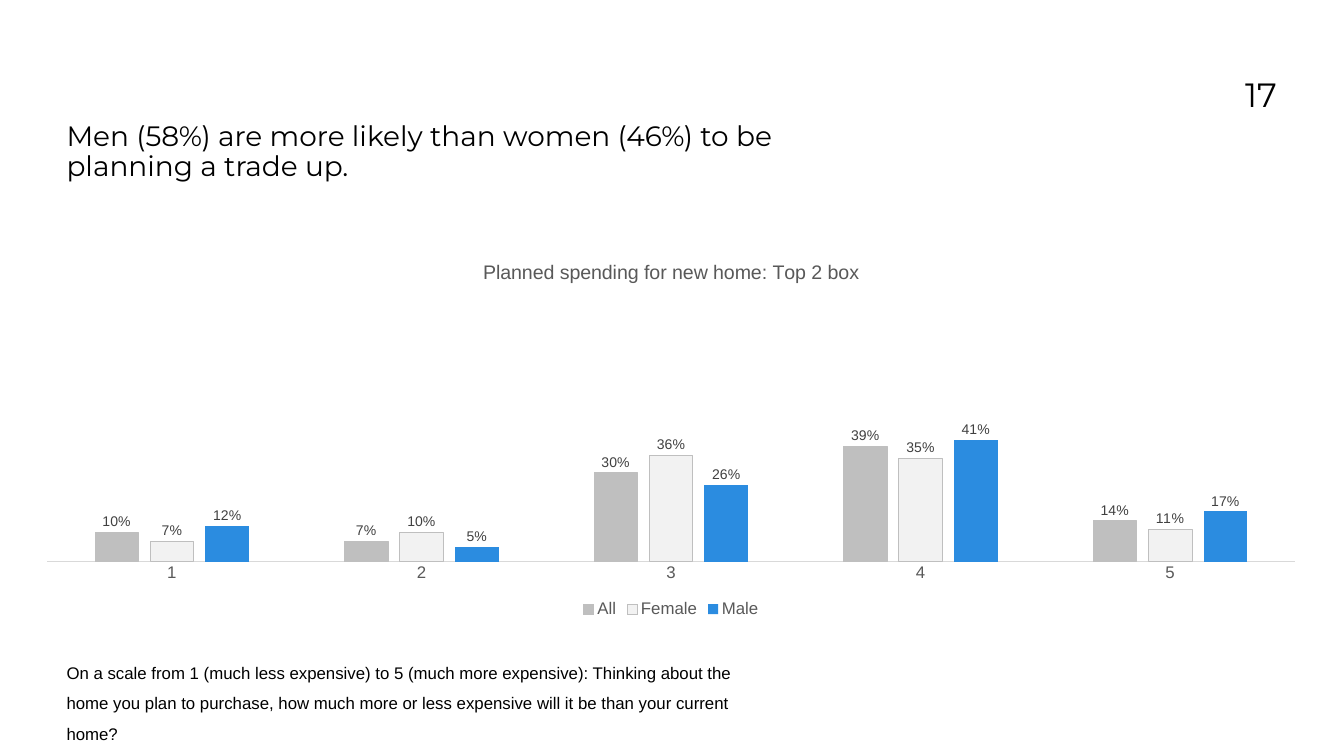
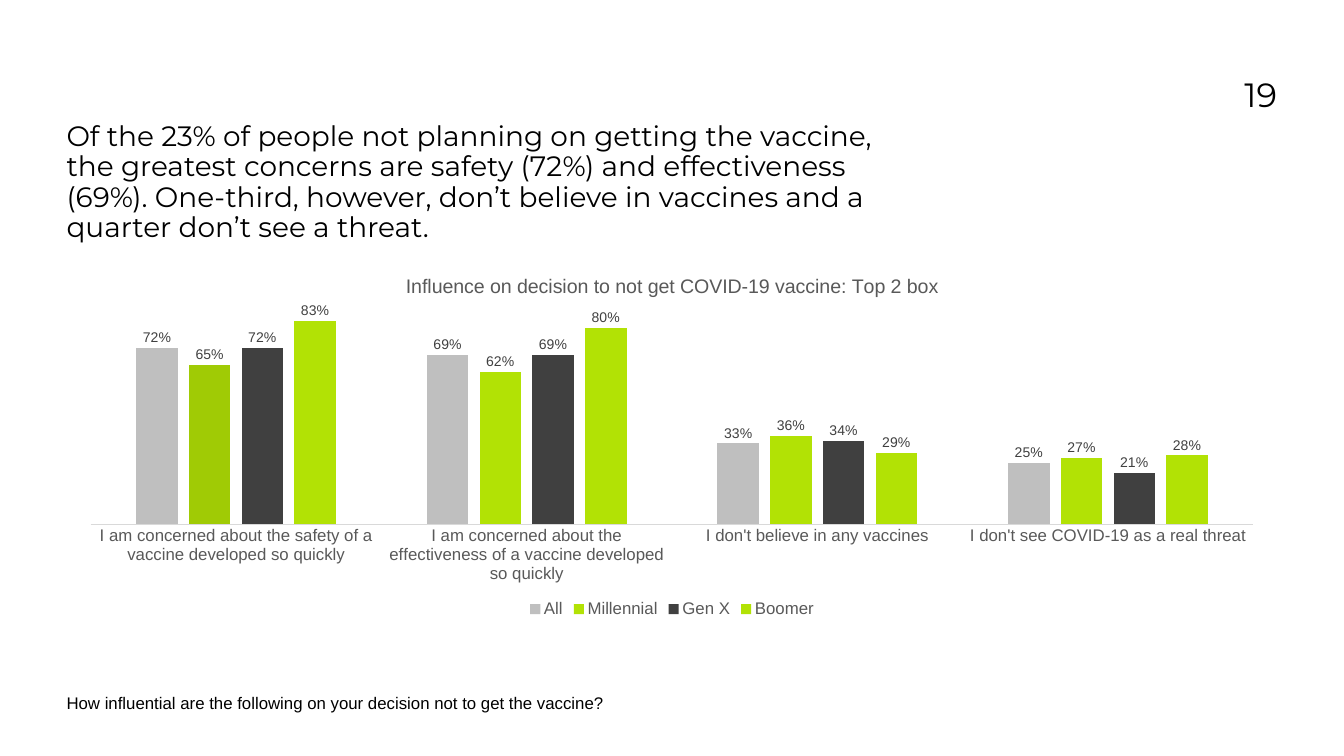
from collections import namedtuple

from lxml import etree
from pptx import Presentation
from pptx.chart.data import CategoryChartData
from pptx.dml.color import RGBColor
from pptx.enum.chart import XL_CHART_TYPE, XL_LABEL_POSITION, XL_LEGEND_POSITION, XL_TICK_MARK
from pptx.enum.text import MSO_ANCHOR, PP_ALIGN
from pptx.oxml.ns import qn
from pptx.util import Inches, Pt

COLUMNS = XL_CHART_TYPE.COLUMN_CLUSTERED
OUTSIDE_END = XL_LABEL_POSITION.OUTSIDE_END
LEGEND_BOTTOM = XL_LEGEND_POSITION.BOTTOM
NO_TICKS = XL_TICK_MARK.NONE
TOP, MIDDLE = MSO_ANCHOR.TOP, MSO_ANCHOR.MIDDLE
LEFT, RIGHT = PP_ALIGN.LEFT, PP_ALIGN.RIGHT

BLACK = RGBColor(0x00, 0x00, 0x00)
DARK_GREY = RGBColor(0x40, 0x40, 0x40)
TEXT_GREY = RGBColor(0x59, 0x59, 0x59)
MID_GREY = RGBColor(0xBF, 0xBF, 0xBF)
AXIS_GREY = RGBColor(0xD9, 0xD9, 0xD9)
PALE_GREY = RGBColor(0xF2, 0xF2, 0xF2)
BLUE = RGBColor(0x2B, 0x8C, 0xE0)
LIME = RGBColor(0xB2, 0xE2, 0x05)
DARK_LIME = RGBColor(0xA0, 0xCB, 0x05)

HEADING_FONT = "Montserrat"
BODY_FONT = "Arial"
MARGIN = 1.32

Box = namedtuple("Box", "left top width height")
Series = namedtuple("Series", "name values fill line", defaults=[None])

NUMBER_BOX = Box(23.09, 0.88, 2.25, 1.64)
HEADLINE_BOX = Box(MARGIN, 2.43, 16.01, 1.5)


def place(box):
    return [Inches(length) for length in box]


def style_font(font, size, color, name=BODY_FONT):
    font.name = name
    font.size = Pt(size)
    font.bold = False
    font.color.rgb = color


def add_text(slide, box, text, size, font_name, line_spacing=1.0,
             alignment=LEFT, anchor=TOP, inset_top=0, wrap=True):
    frame = slide.shapes.add_textbox(*place(box)).text_frame
    frame.word_wrap = wrap
    frame.vertical_anchor = anchor
    frame.margin_left = frame.margin_right = frame.margin_bottom = 0
    frame.margin_top = Inches(inset_top)
    paragraph = frame.paragraphs[0]
    paragraph.alignment = alignment
    paragraph.line_spacing = line_spacing
    run = paragraph.add_run()
    run.text = text
    style_font(run.font, size, BLACK, font_name)


def set_plot_layout(chart, plot_box):
    """Fix the inner plot area, given as fractions of the chart."""
    plot_area = chart.element.find(".//" + qn("c:plotArea"))
    for old_layout in plot_area.findall(qn("c:layout")):
        plot_area.remove(old_layout)
    layout = etree.Element(qn("c:layout"))
    manual = etree.SubElement(layout, qn("c:manualLayout"))
    settings = [("layoutTarget", "inner"), ("xMode", "edge"), ("yMode", "edge")]
    settings += zip("xywh", plot_box)
    for tag, value in settings:
        etree.SubElement(manual, qn("c:" + tag)).set("val", str(value))
    plot_area.insert(0, layout)


def style_series(series, definition):
    series.smooth = False if hasattr(series, "smooth") else None
    series.invert_if_negative = False
    series.format.fill.solid()
    series.format.fill.fore_color.rgb = definition.fill
    if definition.line is None:
        series.format.line.fill.background()
    else:
        series.format.line.color.rgb = definition.line
        series.format.line.width = Pt(0.75)
    labels = series.data_labels
    labels.show_value = True
    labels.position = OUTSIDE_END
    labels.number_format = "0%"
    labels.number_format_is_linked = False
    style_font(labels.font, 20, DARK_GREY)


def add_column_chart(slide, box, title, categories, definitions, plot_box):
    data = CategoryChartData(number_format="0%")
    data.categories = categories
    for definition in definitions:
        data.add_series(definition.name, definition.values)
    chart = slide.shapes.add_chart(COLUMNS, *place(box), data).chart
    style_font(chart.font, 10, BLACK)

    chart.has_title = True
    run = chart.chart_title.text_frame.paragraphs[0].add_run()
    run.text = title
    style_font(run.font, 28, TEXT_GREY)
    chart.chart_title.include_in_layout = False

    chart.has_legend = True
    chart.legend.position = LEGEND_BOTTOM
    chart.legend.include_in_layout = False
    style_font(chart.legend.font, 24, TEXT_GREY)

    category_axis = chart.category_axis
    category_axis.major_tick_mark = category_axis.minor_tick_mark = NO_TICKS
    category_axis.format.line.color.rgb = AXIS_GREY
    category_axis.format.line.width = Pt(0.75)
    style_font(category_axis.tick_labels.font, 24, TEXT_GREY)

    value_axis = chart.value_axis
    value_axis.minimum_scale, value_axis.maximum_scale = 0, 0.9
    value_axis.has_major_gridlines = False
    value_axis.visible = False

    plot = chart.plots[0]
    plot.gap_width, plot.overlap = 219, -27
    plot.vary_by_categories = False
    for series, definition in zip(plot.series, definitions):
        style_series(series, definition)
    set_plot_layout(chart, plot_box)
    return chart


def add_survey_slide(presentation, number, headline, question, question_top):
    slide = presentation.slides.add_slide(presentation.slide_layouts[6])
    add_text(slide, NUMBER_BOX, number, 48, HEADING_FONT, alignment=RIGHT,
             anchor=MIDDLE, inset_top=0.34, wrap=False)
    add_text(slide, HEADLINE_BOX, headline, 40, HEADING_FONT, line_spacing=0.9)
    add_text(slide, Box(MARGIN, question_top, 14, 0.65), question, 24, BODY_FONT,
             line_spacing=1.5)
    return slide


def build_spending_slide(presentation):
    slide = add_survey_slide(
        presentation, "17",
        "Men (58%) are more likely than women (46%) to be planning a trade up.",
        "On a scale from 1 (much less expensive) to 5 (much more expensive): "
        "Thinking about the home you plan to purchase, how much more or less "
        "expensive will it be than your current home?", 12.95)
    add_column_chart(
        slide, Box(0.42, 4.88, 25.79, 7.46),
        "Planned spending for new home: Top 2 box",
        ["1", "2", "3", "4", "5"],
        [Series("All", [0.10, 0.07, 0.30, 0.39, 0.14], MID_GREY, MID_GREY),
         Series("Female", [0.07, 0.10, 0.36, 0.35, 0.11], PALE_GREY, MID_GREY),
         Series("Male", [0.12, 0.05, 0.26, 0.41, 0.17], BLUE)],
        (0.02, 0.13, 0.96, 0.71))


def build_vaccine_slide(presentation):
    slide = add_survey_slide(
        presentation, "19",
        "Of the 23% of people not planning on getting the vaccine, the greatest "
        "concerns are safety (72%) and effectiveness (69%). One-third, however, "
        "don’t believe in vaccines and a quarter don’t see a threat.",
        "How influential are the following on your decision not to get the vaccine?",
        13.55)
    chart = add_column_chart(
        slide, Box(MARGIN, 5.16, 24.03, 7.18),
        "Influence on decision to not get COVID-19 vaccine: Top 2 box",
        ["I am concerned about the safety of a vaccine developed so quickly",
         "I am concerned about the effectiveness of a vaccine developed so quickly",
         "I don't believe in any vaccines",
         "I don't see COVID-19 as a real threat"],
        [Series("All", [0.72, 0.69, 0.33, 0.25], MID_GREY),
         Series("Millennial", [0.65, 0.62, 0.36, 0.27], LIME),
         Series("Gen X", [0.72, 0.69, 0.34, 0.21], DARK_GREY),
         Series("Boomer", [0.83, 0.80, 0.29, 0.28], LIME)],
        (0.02, 0.12, 0.96, 0.61))
    safety_fill = chart.plots[0].series[1].points[0].format.fill
    safety_fill.solid()
    safety_fill.fore_color.rgb = DARK_LIME


def main():
    presentation = Presentation()
    presentation.slide_width = Inches(26.67)
    presentation.slide_height = Inches(15)
    build_spending_slide(presentation)
    build_vaccine_slide(presentation)
    presentation.save("out.pptx")


if __name__ == "__main__":
    main()
